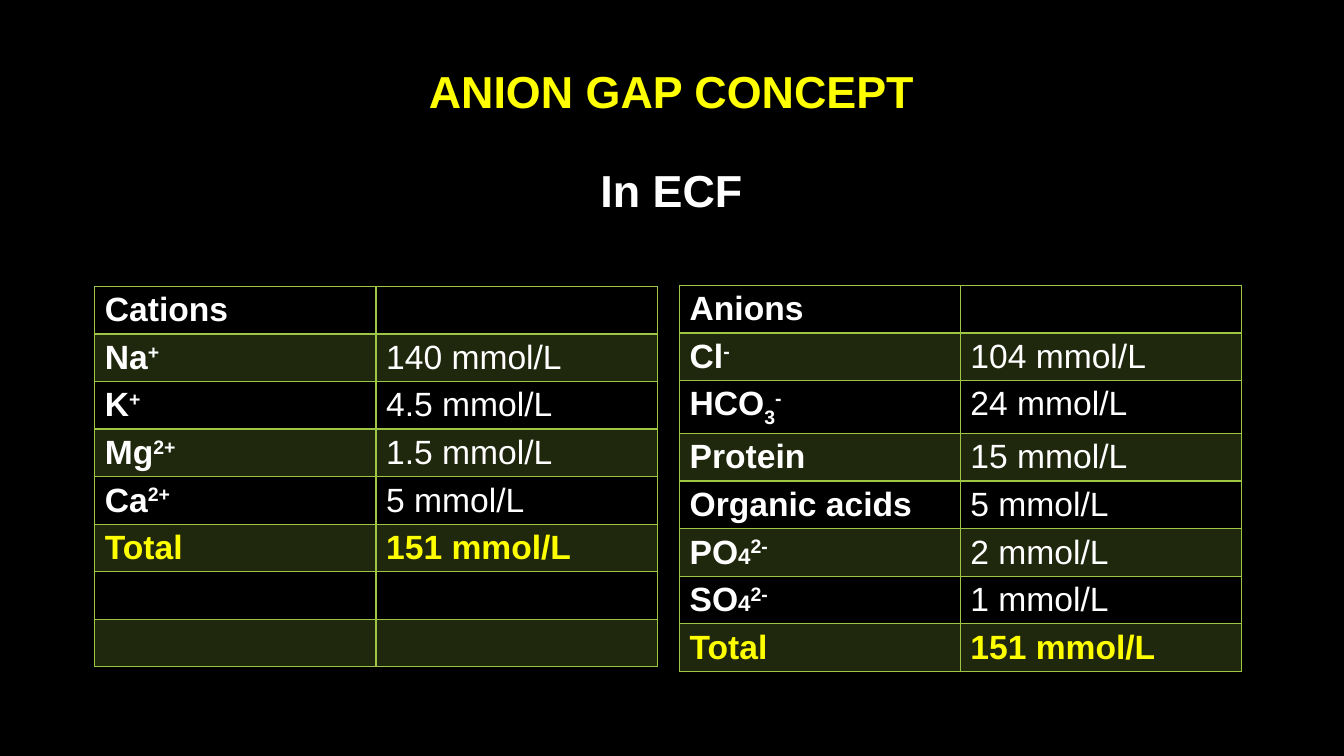
from dataclasses import dataclass

from lxml.etree import SubElement
from pptx import Presentation
from pptx.dml.color import RGBColor
from pptx.enum.text import MSO_ANCHOR, MSO_AUTO_SIZE, PP_ALIGN
from pptx.oxml.ns import qn
from pptx.util import Inches, Pt


@dataclass(frozen=True)
class Theme:
    font: str = "Arial"
    background: str = "000000"
    text: str = "FFFFFF"
    highlight: str = "FFFF00"
    accent: str = "9EC544"
    band_opacity: int = 20
    title_size: int = 32
    body_size: int = 24
    small_size: int = 16


THEME = Theme()
BASELINES = {"^": 30, "_": -25}
SMALL = "~"

CATIONS = [
    (["Cations"], ""),
    (["Na", "^+"], "140 mmol/L"),
    (["K", "^+"], "4.5 mmol/L"),
    (["Mg", "^2+"], "1.5 mmol/L"),
    (["Ca", "^2+"], "5 mmol/L"),
    (["Total"], "151 mmol/L"),
    ([], ""),
    ([], ""),
]
ANIONS = [
    (["Anions"], ""),
    (["Cl", "^-"], "104 mmol/L"),
    (["HCO", "_3", "^-"], "24 mmol/L"),
    (["Protein"], "15 mmol/L"),
    (["Organic acids"], "5 mmol/L"),
    (["PO", "~4", "^2-"], "2 mmol/L"),
    (["SO", "~4", "^2-"], "1 mmol/L"),
    (["Total"], "151 mmol/L"),
]


def add_run(paragraph, text, size, color, bold=True):
    run = paragraph.add_run()
    run.text = text
    run.font.name = THEME.font
    run.font.size = Pt(size)
    run.font.bold = bold
    run.font.color.rgb = RGBColor.from_string(color)
    return run


def add_marked_run(paragraph, part, color, bold):
    """Add a run; a leading ^, _ or ~ makes it superscript, subscript or small."""
    mark = part[0]
    size = THEME.small_size if mark == SMALL else THEME.body_size
    text = part[1:] if mark == SMALL or mark in BASELINES else part
    run = add_run(paragraph, text, size, color, bold)
    if mark in BASELINES:
        run.font._element.set("baseline", str(BASELINES[mark] * 1000))


def draw_borders(cell, bottom_width, top_width):
    properties = cell._tc.get_or_add_tcPr()
    widths = {"lnL": 1, "lnR": 1, "lnT": top_width, "lnB": bottom_width}
    for side, width in widths.items():
        line = SubElement(properties, qn(f"a:{side}"), w=str(Pt(width)))
        fill = SubElement(line, qn("a:solidFill"))
        SubElement(fill, qn("a:srgbClr"), val=THEME.accent)


def fill_band(cell):
    cell.fill.solid()
    cell.fill.fore_color.rgb = RGBColor.from_string(THEME.accent)
    color = cell._tc.tcPr.find(f"{qn('a:solidFill')}/{qn('a:srgbClr')}")
    SubElement(color, qn("a:alpha"), val=str(THEME.band_opacity * 1000))


def add_title(slide, left, top, width, height):
    title = slide.shapes.title
    title.left, title.top = Inches(left), Inches(top)
    title.width, title.height = Inches(width), Inches(height)
    frame = title.text_frame
    frame.auto_size = MSO_AUTO_SIZE.NONE
    frame.vertical_anchor = MSO_ANCHOR.MIDDLE
    heading, subheading = frame.paragraphs[0], frame.add_paragraph()
    add_run(heading, "ANION GAP CONCEPT", THEME.title_size, THEME.highlight)
    add_run(subheading, "In ECF", THEME.title_size, THEME.text)
    for paragraph in (heading, subheading):
        paragraph.alignment = PP_ALIGN.CENTER
        paragraph.line_spacing = 0.9
    subheading.space_before = Pt(36)


def add_ion_table(slide, ions, left, top, width, row_height):
    table = slide.shapes.add_table(
        len(ions), 2, Inches(left), Inches(top),
        Inches(width), Inches(row_height * len(ions)),
    ).table
    table.horz_banding = False
    for row_index, (name, amount) in enumerate(ions):
        is_total = name == ["Total"]
        color = THEME.highlight if is_total else THEME.text
        for column, parts in enumerate((name, [amount] if amount else [])):
            cell = table.cell(row_index, column)
            draw_borders(
                cell,
                bottom_width=2 if row_index == 0 else 1,
                top_width=2 if row_index == 1 else 1,
            )
            if row_index % 2:
                fill_band(cell)
            else:
                cell.fill.background()
            for part in parts:
                add_marked_run(cell.text_frame.paragraphs[0], part, color,
                               bold=column == 0 or is_total)


def add_anion_gap_slide(presentation):
    slide = presentation.slides.add_slide(presentation.slide_layouts[5])
    slide.background.fill.solid()
    slide.background.fill.fore_color.rgb = RGBColor.from_string(THEME.background)
    add_title(slide, 1, 0.48, 11.32, 1.89)
    add_ion_table(slide, CATIONS, 0.94, 2.84, 5.58, 0.47)
    add_ion_table(slide, ANIONS, 6.74, 2.83, 5.57, 0.47)


def main():
    presentation = Presentation()
    presentation.slide_width = Inches(13.33)
    presentation.slide_height = Inches(7.5)
    add_anion_gap_slide(presentation)
    presentation.save("out.pptx")


if __name__ == "__main__":
    main()
